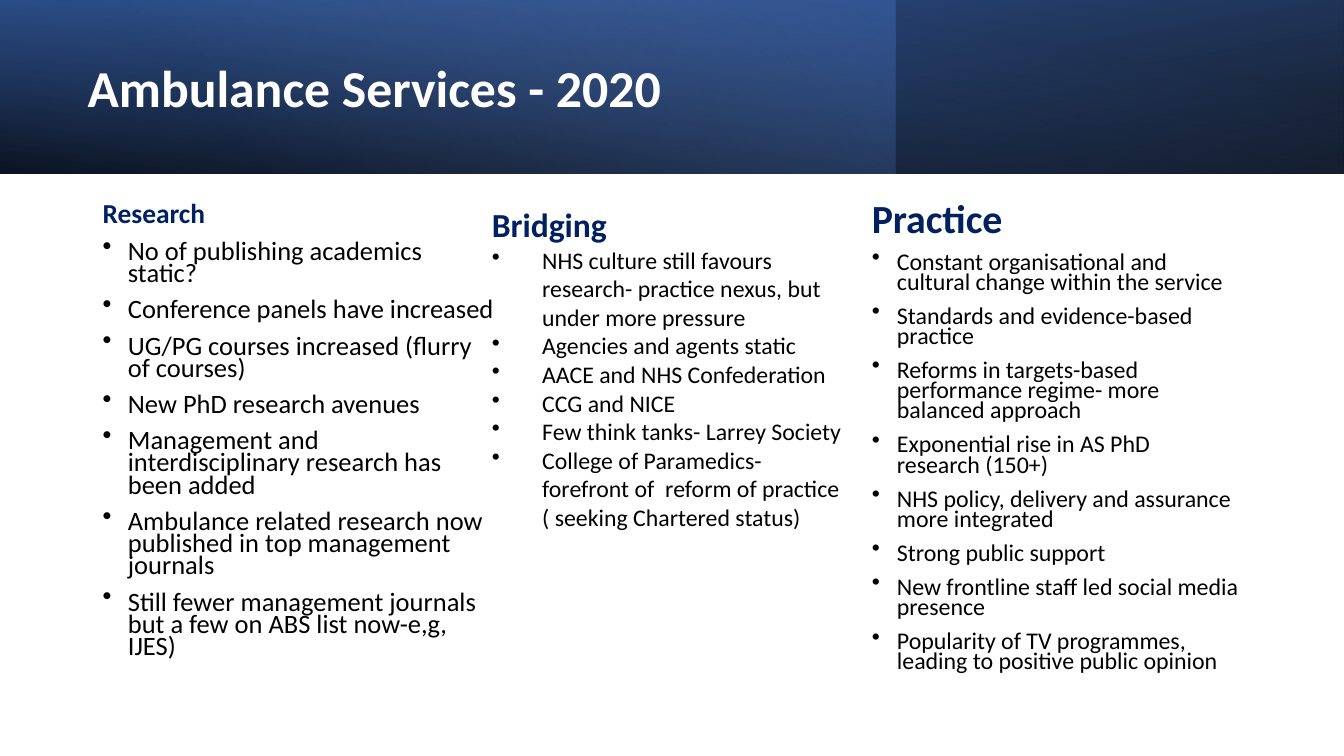
"""Build the Ambulance Services 2020 slide: a gradient banner, a title and three bulleted columns."""
from dataclasses import dataclass

from lxml.etree import SubElement
from pptx import Presentation
from pptx.dml.color import RGBColor
from pptx.enum.shapes import MSO_SHAPE
from pptx.enum.text import MSO_ANCHOR, MSO_AUTO_SIZE, PP_ALIGN
from pptx.oxml import parse_xml
from pptx.oxml.ns import nsdecls, qn
from pptx.slide import Slide
from pptx.text.text import Font
from pptx.util import Pt


@dataclass(frozen=True)
class Theme:
    font: str = "Calibri"
    title: str = "FFFFFF"
    heading: str = "002060"
    body: str = "000000"
    shade: str = "000000"
    navy: str = "2F5597"
    blue: str = "4472C4"
    pale: str = "8FAADC"
    title_size: float = 37
    research_sizes: tuple[float, float] = (19.6, 18.9)
    bridging_sizes: tuple[float, float] = (24, 17)
    practice_sizes: tuple[float, float] = (28.5, 17.1)
    spacer_size: float = 28


@dataclass(frozen=True)
class Stop:
    position: int
    color: str
    opacity: int = 100


@dataclass(frozen=True)
class BannerLayer:
    width: float
    angle: int
    stops: tuple[Stop, ...]
    rotation: int = 0
    flipped: bool = False


@dataclass(frozen=True)
class Column:
    box: tuple[float, float, float, float]
    heading: str
    sizes: tuple[float, float]
    items: tuple[str, ...]
    indent: float = 18
    line_spacing: float = 0.7
    space_before: float = 10
    spacer: bool = False


THEME = Theme()
SLIDE_WIDTH, SLIDE_HEIGHT = 960, 540
BANNER_HEIGHT = 124

BANNER = (
    BannerLayer(SLIDE_WIDTH, 100, (Stop(0, THEME.shade, 96), Stop(100, THEME.navy)), 180, True),
    BannerLayer(640, 140, (Stop(0, THEME.blue, 41), Stop(74, THEME.pale, 0))),
    BannerLayer(SLIDE_WIDTH, 260, (Stop(0, THEME.shade, 63), Stop(78, THEME.blue, 15)), flipped=True),
)

COLUMNS = (
    Column((66.3, 143.3, 296, 342.7), "Research", THEME.research_sizes, (
        "No of publishing academics static?",
        "Conference panels have increased",
        "UG/PG courses increased (flurry of courses)",
        "New PhD research avenues",
        "Management and interdisciplinary research has been added",
        "Ambulance related research now published in top management journals",
        "Still fewer management journals but a few on ABS list now-e,g, IJES)",
    )),
    Column((615.6, 144, 278, 342.7), "Practice", THEME.practice_sizes, (
        "Constant organisational and  cultural change within the service",
        "Standards and evidence-based practice",
        "Reforms in targets-based performance regime- more balanced approach",
        "Exponential rise in AS PhD  research (150+)",
        "NHS policy, delivery and assurance more integrated",
        "Strong public support",
        "New frontline staff led social media presence",
        "Popularity of TV programmes, leading to positive public opinion",
    )),
    Column((344.2, 138.2, 271.4, 280.8), "Bridging", THEME.bridging_sizes, (
        "NHS culture still favours research- practice nexus, but under more pressure",
        "Agencies and agents static",
        "AACE and NHS Confederation",
        "CCG and NICE",
        "Few think tanks- Larrey Society",
        "College of Paramedics- forefront of  reform of practice ( seeking Chartered status)",
    ), indent=36, line_spacing=1.0, space_before=0, spacer=True),
)


def style(font: Font, size: float, color: str, bold: bool = False) -> None:
    font.name = THEME.font
    font.size = Pt(size)
    font.bold = bold
    font.color.rgb = RGBColor.from_string(color)


def add_banner_layer(slide: Slide, layer: BannerLayer) -> None:
    panel = slide.shapes.add_shape(MSO_SHAPE.RECTANGLE, 0, 0, Pt(layer.width), Pt(BANNER_HEIGHT))
    panel.shadow.inherit = False
    panel.line.fill.background()
    panel.rotation = layer.rotation
    properties = panel._element.spPr
    if layer.flipped:
        properties.find(qn("a:xfrm")).set("flipH", "1")
    stops = "".join(
        f'<a:gs pos="{stop.position * 1000}"><a:srgbClr val="{stop.color}">'
        f'<a:alpha val="{stop.opacity * 1000}"/></a:srgbClr></a:gs>'
        for stop in layer.stops
    )
    gradient = parse_xml(
        f'<a:gradFill {nsdecls("a")} rotWithShape="1"><a:gsLst>{stops}</a:gsLst>'
        f'<a:lin ang="{layer.angle * 60000}" scaled="0"/></a:gradFill>'
    )
    properties.find(qn("a:prstGeom")).addnext(gradient)


def place_title(slide: Slide, text: str) -> None:
    title = slide.shapes.title
    title.left, title.top, title.width, title.height = Pt(55.4), Pt(19.4), Pt(555.8), Pt(91.4)
    slide.shapes._spTree.append(title._element)
    frame = title.text_frame
    frame.text = text
    frame.word_wrap = True
    frame.auto_size = MSO_AUTO_SIZE.NONE
    frame.vertical_anchor = MSO_ANCHOR.MIDDLE
    line = frame.paragraphs[0]
    line.alignment = PP_ALIGN.LEFT
    line.line_spacing = 0.9
    style(line.font, THEME.title_size, THEME.title, bold=True)


def add_column(slide: Slide, column: Column) -> None:
    frame = slide.shapes.add_textbox(*map(Pt, column.box)).text_frame
    frame.word_wrap = True
    heading_size, item_size = column.sizes
    heading = frame.paragraphs[0]
    heading_run = heading.add_run()
    heading_run.text = column.heading
    if column.spacer:
        style(heading_run.font, heading_size, THEME.heading, bold=True)
        spacer = heading.add_run()
        spacer.text = " "
        style(spacer.font, THEME.spacer_size, THEME.body)
    else:
        style(heading.font, heading_size, THEME.heading, bold=True)
    for item in column.items:
        bullet = frame.add_paragraph()
        bullet.text = item
        style(bullet.font, item_size, THEME.body)
    for paragraph in frame.paragraphs:
        paragraph.line_spacing = column.line_spacing
        paragraph.space_before = Pt(column.space_before)
    for bullet in frame.paragraphs[1:]:
        properties = bullet._p.get_or_add_pPr()
        properties.set("marL", str(Pt(column.indent)))
        properties.set("indent", str(-Pt(column.indent)))
        mark = SubElement(properties, qn("a:buChar"))
        mark.set("char", "•")
        properties.find(qn("a:defRPr")).addprevious(mark)


def main() -> None:
    deck = Presentation()
    deck.slide_width, deck.slide_height = Pt(SLIDE_WIDTH), Pt(SLIDE_HEIGHT)
    slide = deck.slides.add_slide(deck.slide_layouts.get_by_name("Title Only"))
    for layer in BANNER:
        add_banner_layer(slide, layer)
    place_title(slide, "Ambulance Services - 2020")
    for column in COLUMNS:
        add_column(slide, column)
    deck.save("out.pptx")


if __name__ == "__main__":
    main()
